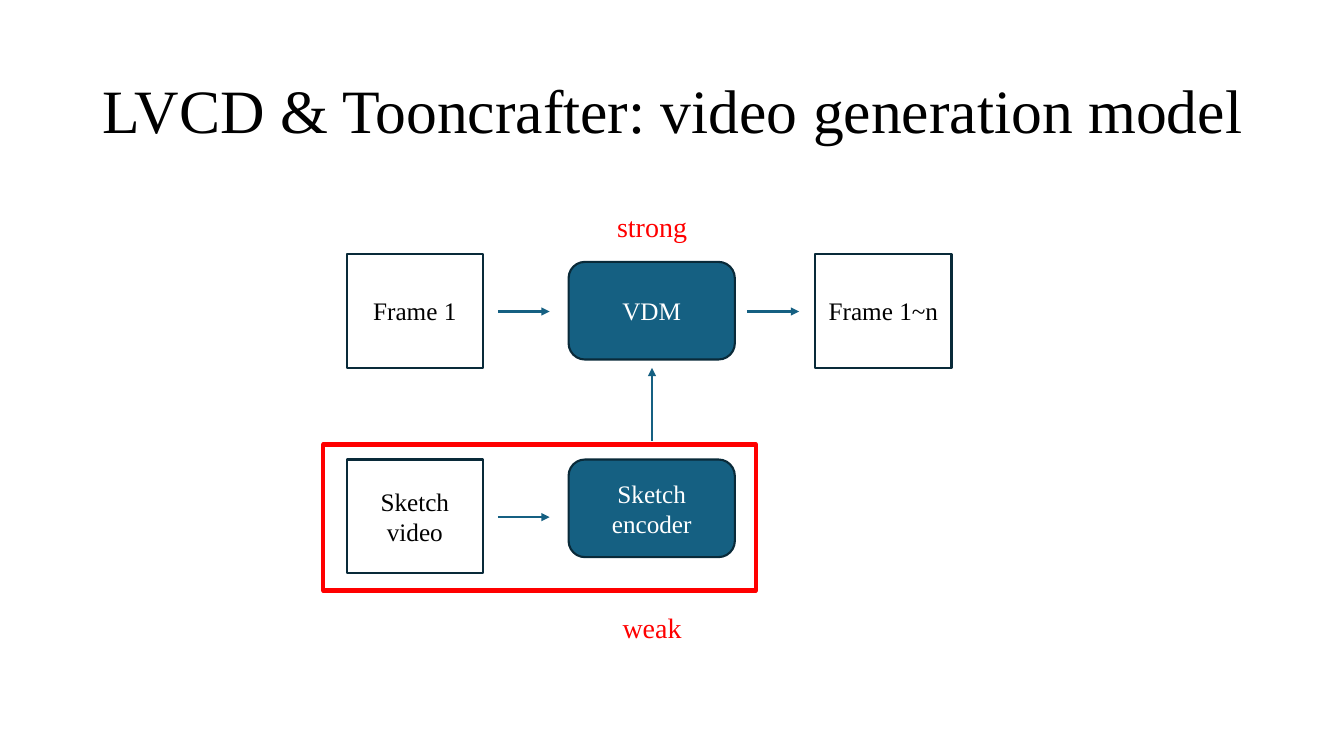
"""Build a slide on a video generation model with a weak sketch encoder."""
from dataclasses import dataclass

from lxml.etree import SubElement
from pptx import Presentation
from pptx.dml.color import RGBColor
from pptx.enum.shapes import MSO_CONNECTOR, MSO_SHAPE
from pptx.enum.text import MSO_ANCHOR, PP_ALIGN
from pptx.oxml.ns import qn
from pptx.util import Cm, Pt


@dataclass(frozen=True)
class Theme:
    font: str = "Times New Roman"
    black: RGBColor = RGBColor(0x00, 0x00, 0x00)
    white: RGBColor = RGBColor(0xFF, 0xFF, 0xFF)
    teal: RGBColor = RGBColor(0x15, 0x60, 0x82)
    navy: RGBColor = RGBColor(0x09, 0x2A, 0x39)
    red: RGBColor = RGBColor(0xFF, 0x00, 0x00)
    title: int = 44
    label: int = 20
    body: int = 18
    thin: float = 1.5
    thick: int = 3


theme = Theme()


def write(shape, text, size, color, align=PP_ALIGN.CENTER, anchor=MSO_ANCHOR.MIDDLE):
    frame = shape.text_frame
    frame.word_wrap = True
    frame.vertical_anchor = anchor
    para = frame.paragraphs[0]
    para.text = text
    para.alignment = align
    para.font.name = theme.font
    para.font.size = Pt(size)
    para.font.color.rgb = color
    return para


def draw(kind, left, top, width, height, edge, weight):
    shape = slide.shapes.add_shape(kind, Cm(left), Cm(top), Cm(width), Cm(height))
    shape.shadow.inherit = False
    shape.line.color.rgb = edge
    shape.line.width = Pt(weight)
    return shape


deck = Presentation()
deck.slide_width, deck.slide_height = Cm(33.87), Cm(19.05)
slide = deck.slides.add_slide(deck.slide_layouts[6])

title = slide.shapes.add_textbox(Cm(2.34), Cm(1.02), Cm(30.12), Cm(3.68))
head = write(title, "LVCD & Tooncrafter: video generation model",
             theme.title, theme.black, PP_ALIGN.LEFT)
head.line_spacing = 0.9

upper, lower = 6.4, 11.58
for text, left, top in [
    ("Frame 1", 8.74, upper),
    ("Frame 1~n", 20.55, upper),
    ("Sketch video", 8.74, lower),
]:
    data = draw(MSO_SHAPE.RECTANGLE, left, top, 3.43, 2.87, theme.navy, theme.thin)
    data.fill.solid()
    data.fill.fore_color.rgb = theme.white
    write(data, text, theme.body, theme.black)

for text, top in [("VDM", 6.6), ("Sketch encoder", lower)]:
    model = draw(MSO_SHAPE.ROUNDED_RECTANGLE, 14.33, top, 4.19, 2.46,
                 theme.navy, theme.thin)
    model.fill.solid()
    model.fill.fore_color.rgb = theme.teal
    write(model, text, theme.body, theme.white)

for ends in [
    (12.55, 7.85, 13.85, 7.85),
    (18.82, 7.85, 20.14, 7.85),
    (12.55, 13.03, 13.85, 13.03),
    (16.43, 11.1, 16.43, 9.27),
]:
    arrow = slide.shapes.add_connector(MSO_CONNECTOR.STRAIGHT, *map(Cm, ends))
    arrow.line.color.rgb = theme.teal
    arrow.line.width = Pt(theme.thin)
    SubElement(arrow.line._get_or_add_ln(), qn("a:tailEnd"), type="triangle")
    SubElement(arrow._element.spPr, qn("a:effectLst"))

group = draw(MSO_SHAPE.RECTANGLE, 8.15, 11.2, 10.9, 3.68, theme.red, theme.thick)
group.fill.background()

for text, top in [("weak", 15.27), ("strong", 5.16)]:
    label = slide.shapes.add_textbox(Cm(15.09), Cm(top), Cm(2.69), Cm(1.12))
    write(label, text, theme.label, theme.red, anchor=MSO_ANCHOR.TOP)

deck.save("out.pptx")
